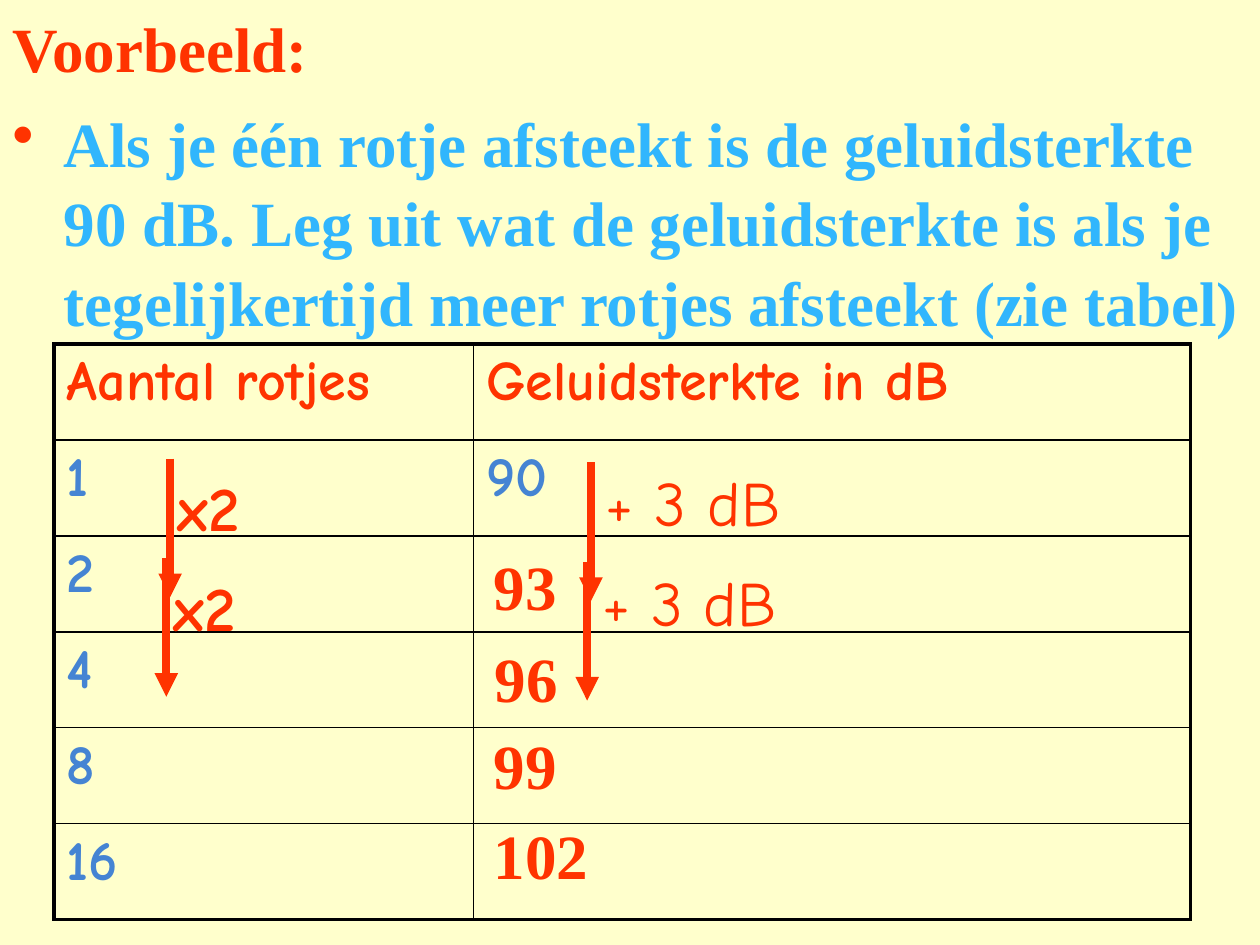
from lxml import etree
from pptx import Presentation
from pptx.dml.color import RGBColor
from pptx.enum.shapes import MSO_CONNECTOR
from pptx.enum.text import MSO_ANCHOR, PP_ALIGN
from pptx.oxml.ns import qn
from pptx.util import Inches, Pt

STRAIGHT = MSO_CONNECTOR.STRAIGHT
MIDDLE, TOP, LEFT = MSO_ANCHOR.MIDDLE, MSO_ANCHOR.TOP, PP_ALIGN.LEFT
CREAM = RGBColor(0xFF, 0xFF, 0xCC)
RED = RGBColor(0xFF, 0x33, 0x00)
SKY = RGBColor(0x31, 0xB6, 0xFD)
BLUE = RGBColor(0x45, 0x84, 0xD3)
SERIF, COMIC = "Times New Roman", "Comic Neue"
THIN, THICK = Pt(1), Pt(2.25)

ROWS = [("Aantal rotjes", "Geluidsterkte in dB"), ("1", "90"), ("2", ""),
        ("4", ""), ("8", ""), ("16", "")]
ANSWERS = [("93", 3.82, 4.3, 0.87), ("96", 3.83, 5.03, 0.87),
           ("99", 3.82, 5.72, 0.87), ("102", 3.82, 6.43, 1.18)]


def style_text(frame, text, font_name, color, size=36, bold=True):
    frame.text = text
    for paragraph in frame.paragraphs:
        paragraph.alignment = LEFT
        for run in paragraph.runs:
            font = run.font
            font.name, font.size, font.bold = font_name, Pt(size), bold
            font.color.rgb = color


def add_label(shapes, text, left, top, width, height, font_name, color, bold=True):
    box = shapes.add_textbox(Inches(left), Inches(top), Inches(width), Inches(height))
    box.text_frame.word_wrap = True
    style_text(box.text_frame, text, font_name, color, bold=bold)
    return box


def add_title(slide, left, top, width, height):
    title = slide.shapes.title
    title.left, title.top = Inches(left), Inches(top)
    title.width, title.height = Inches(width), Inches(height)
    title.text_frame.vertical_anchor = MIDDLE
    style_text(title.text_frame, "Voorbeeld:", SERIF, RED)


def add_question(slide, left, top, width, height):
    question = add_label(
        slide.shapes,
        "Als je één rotje afsteekt is de geluidsterkte 90 dB. Leg uit wat de "
        "geluidsterkte is als je\vtegelijkertijd meer rotjes afsteekt (zie tabel)",
        left, top, width, height, SERIF, SKY)
    paragraph = question.text_frame.paragraphs[0]
    paragraph.line_spacing = 1.05
    properties = paragraph._p.get_or_add_pPr()
    properties.set("marL", str(Inches(0.41)))
    properties.set("indent", str(-Inches(0.41)))
    bullet_color = etree.SubElement(properties, qn("a:buClr"))
    etree.SubElement(bullet_color, qn("a:srgbClr"), val=str(RED))
    etree.SubElement(properties, qn("a:buChar"), char="•")


def set_borders(cell, **widths):
    properties = cell._tc.get_or_add_tcPr()
    for index, (side, width) in enumerate(widths.items()):
        border = etree.Element(qn(f"a:ln{side}"), w=str(width))
        fill = etree.SubElement(border, qn("a:solidFill"))
        etree.SubElement(fill, qn("a:srgbClr"), val="000000")
        properties.insert(index, border)


def add_sound_table(slide, left, top, width, height):
    last_row, last_column = len(ROWS) - 1, len(ROWS[0]) - 1
    table = slide.shapes.add_table(
        len(ROWS), len(ROWS[0]), Inches(left), Inches(top),
        Inches(width), Inches(height)).table
    table.first_row = table.horz_banding = False
    table.columns[0].width = Inches(3.33)
    table.columns[1].width = Inches(width - 3.33)
    for r, row in enumerate(ROWS):
        for c, text in enumerate(row):
            cell = table.cell(r, c)
            cell.fill.background()
            cell.vertical_anchor = TOP
            style_text(cell.text_frame, text, COMIC, BLUE if r else RED, size=32)
            set_borders(cell,
                        L=THIN if c else THICK,
                        R=THICK if c == last_column else THIN,
                        T=THIN if r else THICK,
                        B=THICK if r == last_row else THIN)


def add_step(slide, text, left, top, width, arrow_dx, arrow_dy, bold):
    """Group a step label with the downward arrow beside it."""
    shapes = slide.shapes.add_group_shape().shapes
    x, y = left + arrow_dx, top + arrow_dy
    arrow = shapes.add_connector(
        STRAIGHT, Inches(x), Inches(y), Inches(x), Inches(y + 1.1))
    arrow.line.color.rgb = RED
    arrow.line.width = Pt(4.5)
    etree.SubElement(arrow.line._get_or_add_ln(), qn("a:tailEnd"), type="triangle")
    etree.SubElement(arrow._element.spPr, qn("a:effectLst"))
    add_label(shapes, text, left, top, width, 0.63, COMIC, RED, bold)


def main():
    prs = Presentation()
    prs.slide_width, prs.slide_height = Inches(10), Inches(7.5)
    slide = prs.slides.add_slide(prs.slide_layouts[5])
    slide.background.fill.solid()
    slide.background.fill.fore_color.rgb = CREAM

    add_title(slide, 0, 0, 10, 0.75)
    add_question(slide, 0, 0.75, 10, 2.06)
    add_sound_table(slide, 0.43, 2.73, 9.02, 4.57)
    for step in range(2):
        dx, dy = -0.03 * step, 0.79 * step
        add_step(slide, "x2", 1.31 + dx, 3.67 + dy, 0.87, 0.04, -0.03, True)
        add_step(slide, "+ 3 dB", 4.71 + dx, 3.63 + dy, 1.81, -0.02, 0.04, False)
    for text, left, top, width in ANSWERS:
        add_label(slide.shapes, text, left, top, width, 0.63, SERIF, RED)

    prs.save("out.pptx")


if __name__ == "__main__":
    main()
